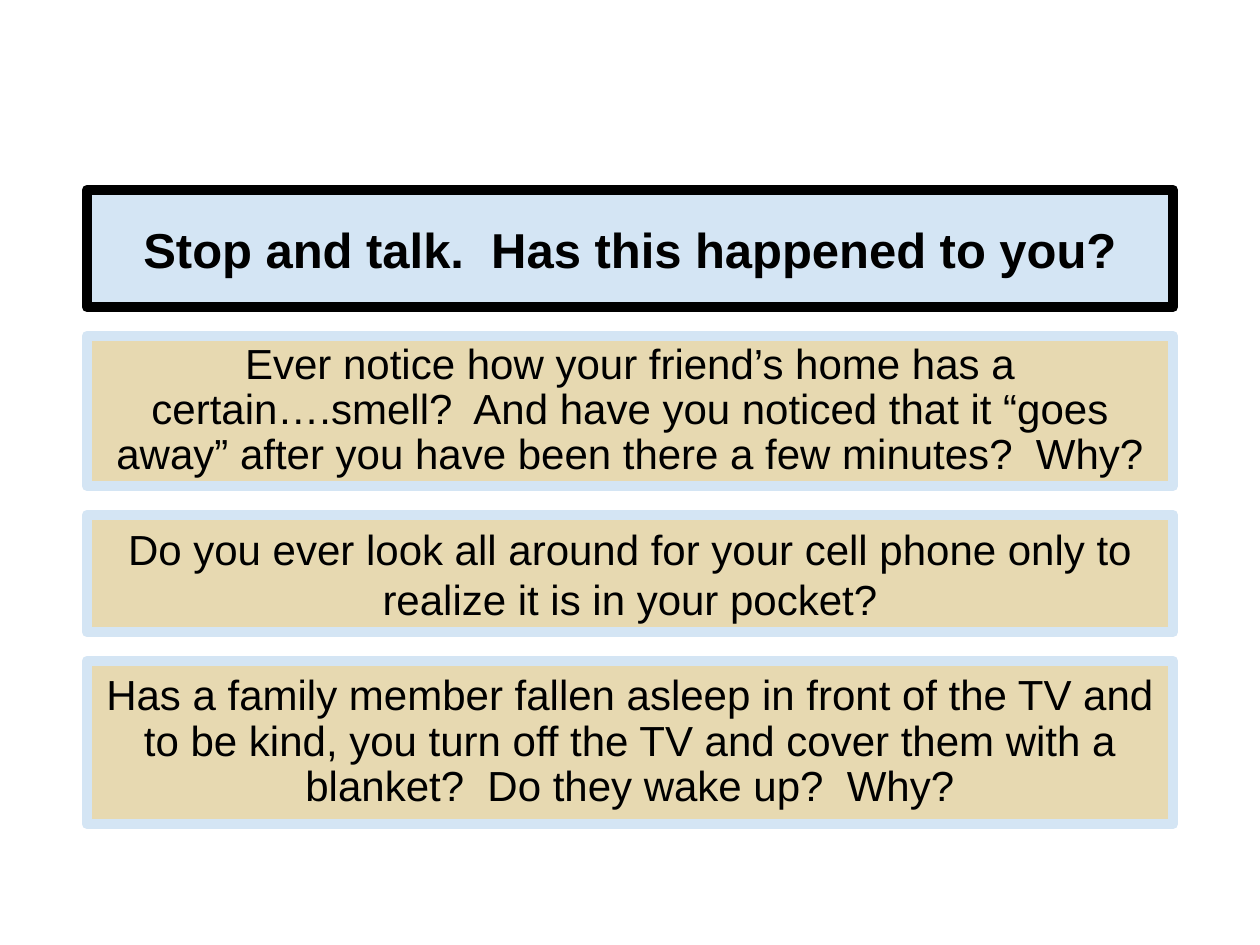
"""Build the slide of a heading and three discussion questions in stacked boxes."""
from pptx import Presentation
from pptx.dml.color import RGBColor
from pptx.enum.shapes import MSO_SHAPE
from pptx.enum.text import MSO_ANCHOR, PP_ALIGN
from pptx.util import Pt

EMU_PER_PX = 914400 / 126
THEME = {
    "font": "Arial",
    "black": RGBColor.from_string("000000"),
    "blue": RGBColor.from_string("D4E5F4"),
    "sand": RGBColor.from_string("E7D9B1"),
    "border": Pt(6),
    "heading": Pt(28),
    "question": Pt(24),
}
LEFT, TOP, WIDTH, GAP = 87, 190, 1086, 29


def px(length):
    return round(length * EMU_PER_PX)


boxes = [
    ("Stop and talk.  Has this happened to you?", 117, 1.0),
    ("Ever notice how your friend’s home has a certain….smell?  And have you noticed "
     "that it “goes away” after you have been there a few minutes?  Why?", 150, 0.9),
    ("Do you ever look all around for your cell phone only to realize it is in your pocket?",
     117, 1.0),
    ("Has a family member fallen asleep in front of the TV and to be kind, you turn off "
     "the TV and cover them with a blanket?  Do they wake up?  Why?", 163, 0.9),
]

presentation = Presentation()
presentation.slide_width, presentation.slide_height = px(1260), px(945)
slide = presentation.slides.add_slide(presentation.slide_layouts[6])

top = TOP
for index, (text, height, line_spacing) in enumerate(boxes):
    is_heading = index == 0
    shape = slide.shapes.add_shape(
        MSO_SHAPE.RECTANGLE, px(LEFT), px(top), px(WIDTH), px(height))
    shape.shadow.inherit = False
    shape.fill.solid()
    shape.fill.fore_color.rgb = THEME["blue" if is_heading else "sand"]
    shape.line.color.rgb = THEME["black" if is_heading else "blue"]
    shape.line.width = THEME["border"]

    text_frame = shape.text_frame
    text_frame.text = text
    text_frame.word_wrap = True
    text_frame.vertical_anchor = MSO_ANCHOR.MIDDLE
    paragraph = text_frame.paragraphs[0]
    paragraph.alignment = PP_ALIGN.CENTER
    paragraph.line_spacing = line_spacing
    font = paragraph.runs[0].font
    font.name = THEME["font"]
    font.size = THEME["heading" if is_heading else "question"]
    font.bold = is_heading
    font.color.rgb = THEME["black"]
    top += height + GAP

presentation.save("out.pptx")
